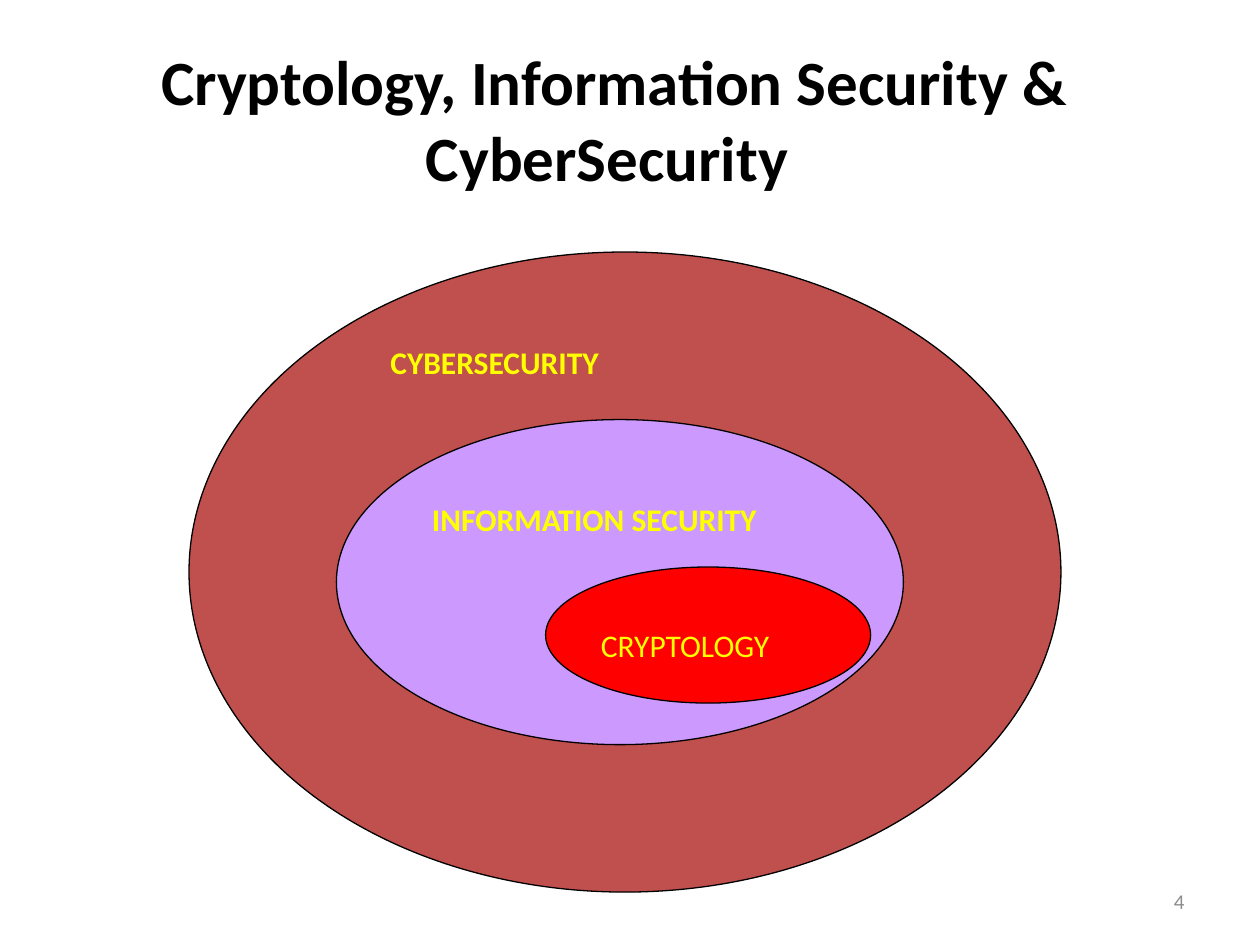
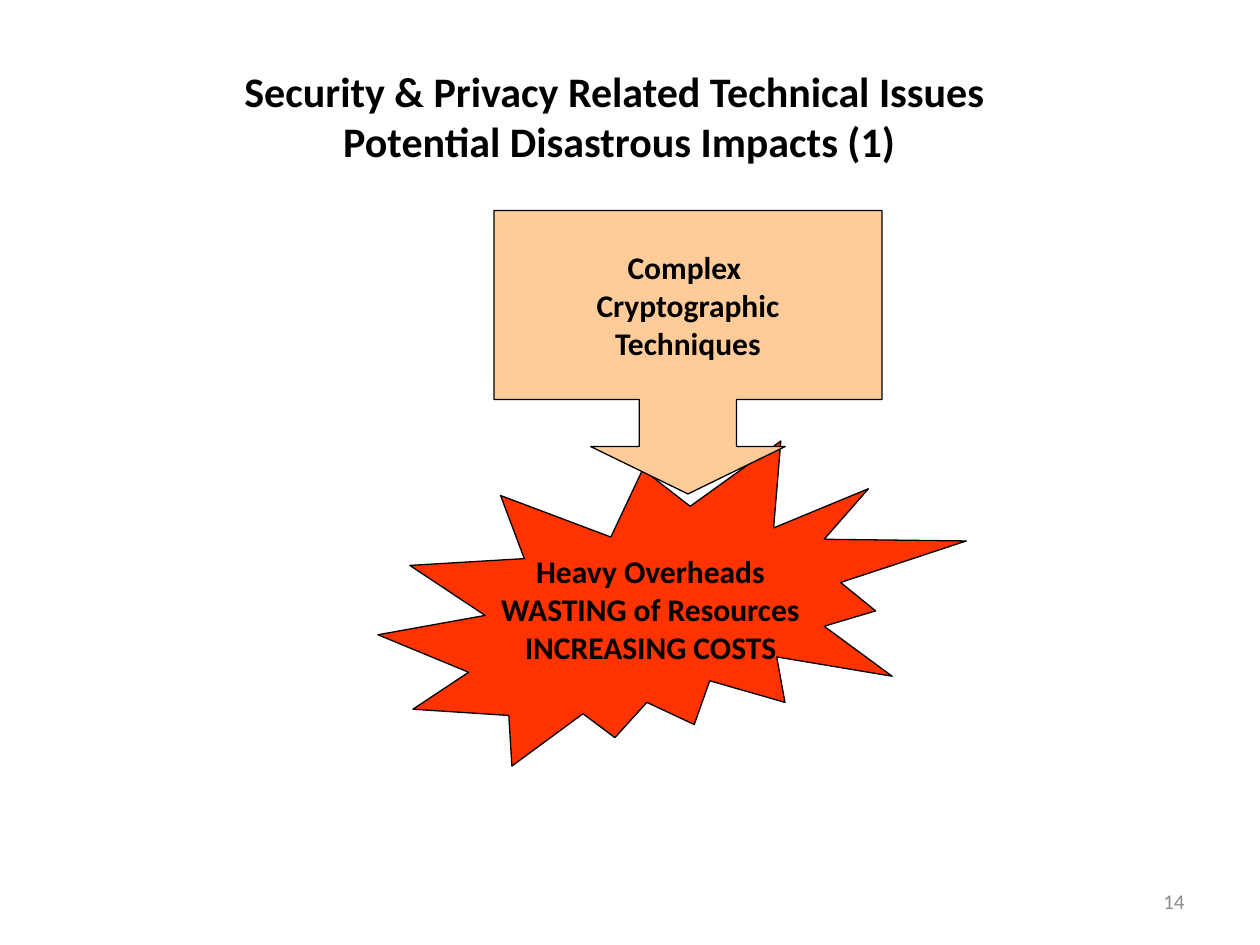
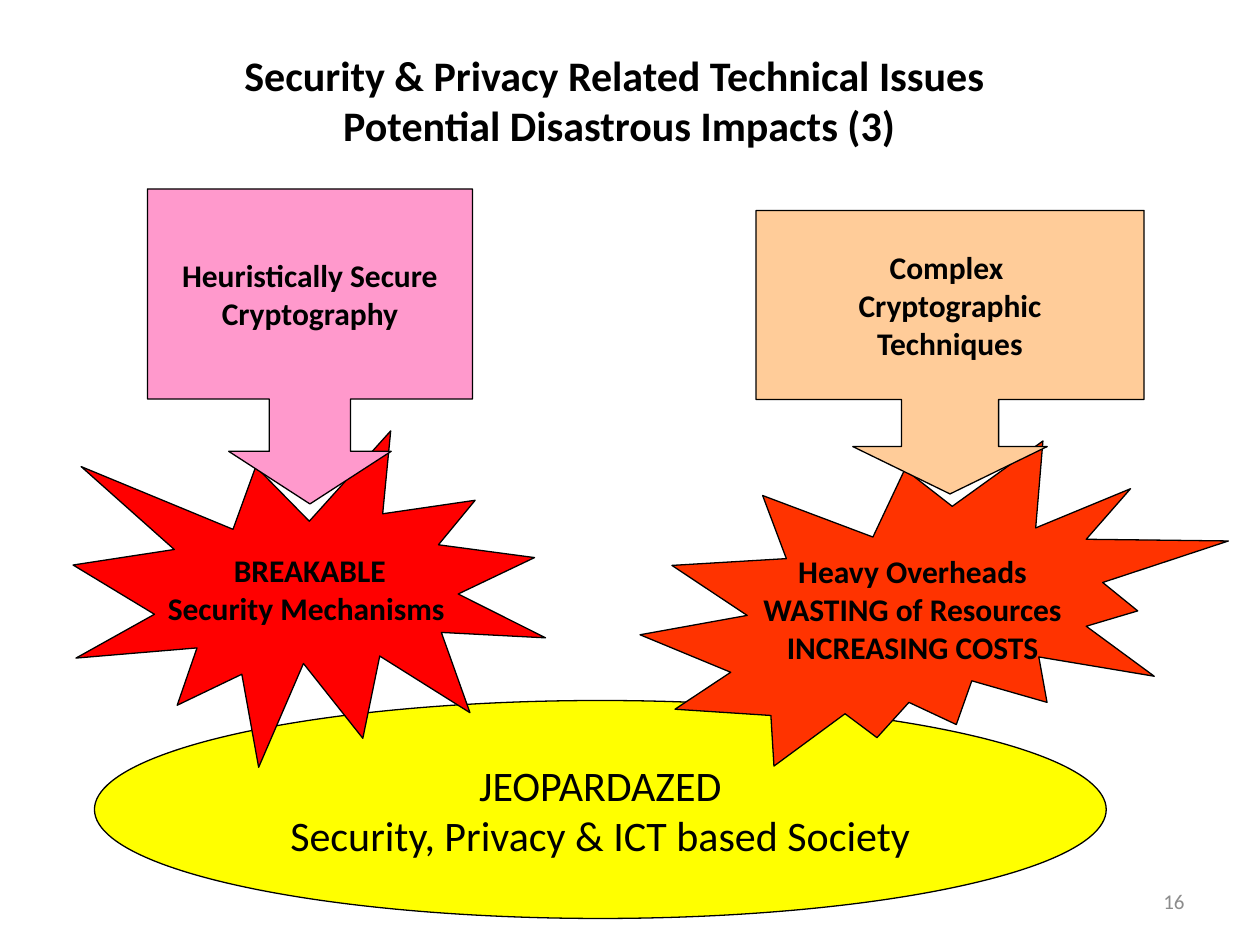
from dataclasses import dataclass

from pptx import Presentation
from pptx.dml.color import RGBColor
from pptx.enum.shapes import MSO_SHAPE
from pptx.enum.text import MSO_ANCHOR, MSO_AUTO_SIZE, PP_ALIGN
from pptx.util import Inches, Pt

FONT = "Calibri"
COLORS = {
    "black": "000000",
    "gray": "8C8C8C",
    "yellow": "FFFF00",
    "brick": "C0504D",
    "lilac": "CC99FF",
    "red": "FF0000",
    "orange": "FF3300",
    "peach": "FFCC99",
    "pink": "FF99CC",
}
PAGE_NUMBER_BOX = (7.17, 6.95, 2.33, 0.4)
IMPACTS_TITLE = "Security & Privacy Related Technical Issues \vPotential Disastrous Impacts ({})"


@dataclass
class Impact:
    """A cause callout pointing down at the burst that names its effect."""
    cause: list
    cause_color: str
    cause_offset: float
    cause_size: tuple
    arrow: float
    effect: list
    effect_color: str
    effect_drop: float
    effect_size: tuple
    burst: MSO_SHAPE


HEURISTIC = Impact(
    cause=["Heuristically Secure", "Cryptography"],
    cause_color="pink", cause_offset=0.59, cause_size=(2.58, 2.5), arrow=0.258,
    effect=[" BREAKABLE", "Security Mechanisms"],
    effect_color="red", effect_drop=1.92, effect_size=(3.75, 2.67),
    burst=MSO_SHAPE.EXPLOSION1,
)
COMPLEX = Impact(
    cause=["Complex ", "Cryptographic", "Techniques"],
    cause_color="peach", cause_offset=0.92, cause_size=(3.08, 2.25), arrow=0.343,
    effect=["Heavy Overheads", "WASTING of Resources", "INCREASING COSTS"],
    effect_color="orange", effect_drop=1.83, effect_size=(4.67, 2.58),
    burst=MSO_SHAPE.EXPLOSION2,
)


def rgb(color):
    return RGBColor.from_string(COLORS[color])


def inches(box):
    return [Inches(length) for length in box]


def write(frame, lines, size, color="black", bold=False, align=PP_ALIGN.CENTER,
          anchor=MSO_ANCHOR.MIDDLE, wrap=False):
    frame.word_wrap = wrap
    frame.vertical_anchor = anchor
    frame.text = "\n".join(lines)
    for paragraph in frame.paragraphs:
        paragraph.alignment = align
        paragraph.font.name = FONT
        paragraph.font.size = Pt(size)
        paragraph.font.bold = bold
        paragraph.font.color.rgb = rgb(color)


def add_outlined(slide, preset, box, fill, lines=(), size=18, bold=True):
    outlined = slide.shapes.add_shape(preset, *inches(box))
    outlined.shadow.inherit = False
    outlined.fill.solid()
    outlined.fill.fore_color.rgb = rgb(fill)
    outlined.line.color.rgb = rgb("black")
    outlined.line.width = Pt(0.75)
    if lines:
        write(outlined.text_frame, lines, size, bold=bold)
    return outlined


def add_titled_slide(prs, title, title_box, title_size, number):
    slide = prs.slides.add_slide(prs.slide_layouts[5])
    heading = slide.shapes.title
    heading.left, heading.top, heading.width, heading.height = inches(title_box)
    write(heading.text_frame, [title], title_size, bold=True, wrap=True)
    heading.text_frame.auto_size = MSO_AUTO_SIZE.NONE
    page_number = slide.shapes.add_textbox(*inches(PAGE_NUMBER_BOX))
    write(page_number.text_frame, [str(number)], 12, "gray",
          align=PP_ALIGN.RIGHT, wrap=True)
    return slide


def add_nested_fields(slide, left, top):
    """Draw the three fields as ellipses inside each other, then their labels."""
    fields = [
        ("CYBERSECURITY", "brick", (0, 0, 6.92, 5.08), (1.5, 0.67, 2.34, 0.4), True),
        ("INFORMATION SECURITY", "lilac", (1.17, 1.33, 4.5, 2.58), (1.83, 1.92, 3.3, 0.4), True),
        ("CRYPTOLOGY", "red", (2.83, 2.5, 2.58, 1.08), (3.17, 2.92, 1.94, 0.4), False),
    ]

    def placed(box):
        x, y, width, height = box
        return left + x, top + y, width, height

    for _, color, area, _, _ in fields:
        add_outlined(slide, MSO_SHAPE.OVAL, placed(area), color)
    for name, _, _, label_box, bold in fields:
        label = slide.shapes.add_textbox(*inches(placed(label_box)))
        write(label.text_frame, [name], 18, "yellow", bold,
              align=PP_ALIGN.LEFT, anchor=MSO_ANCHOR.TOP)
        label.text_frame.auto_size = MSO_AUTO_SIZE.SHAPE_TO_FIT_TEXT


def add_impact(slide, impact, left, top):
    add_outlined(slide, impact.burst,
                 (left, top + impact.effect_drop, *impact.effect_size),
                 impact.effect_color, impact.effect)
    callout = add_outlined(slide, MSO_SHAPE.DOWN_ARROW_CALLOUT,
                           (left + impact.cause_offset, top, *impact.cause_size),
                           impact.cause_color, impact.cause)
    for index, ratio in enumerate((impact.arrow, impact.arrow, 0.167, 0.667)):
        callout.adjustments[index] = ratio


def build_fields_slide(prs):
    slide = add_titled_slide(prs, "Cryptology, Information Security & CyberSecurity ",
                             (0.25, 0.33, 9.25, 1.22), 36, 4)
    add_nested_fields(slide, 1.5, 2)


def build_overheads_slide(prs):
    slide = add_titled_slide(prs, IMPACTS_TITLE.format(1), (0.25, 0.42, 9.33, 1), 24, 14)
    add_impact(slide, COMPLEX, 3, 1.67)


def build_society_slide(prs):
    slide = add_titled_slide(prs, IMPACTS_TITLE.format(3), (0.25, 0.25, 9.33, 1.08), 24, 16)
    add_outlined(slide, MSO_SHAPE.OVAL, (0.75, 5.56, 8.03, 1.73), "yellow",
                 ["JEOPARDAZED", "Security, Privacy & ICT based Society"],
                 size=24, bold=False)
    add_impact(slide, HEURISTIC, 0.58, 1.5)
    add_impact(slide, COMPLEX, 5.08, 1.67)


def main():
    prs = Presentation()
    prs.slide_width, prs.slide_height = Inches(10), Inches(7.5)
    build_fields_slide(prs)
    build_overheads_slide(prs)
    build_society_slide(prs)
    prs.save("out.pptx")


if __name__ == "__main__":
    main()
